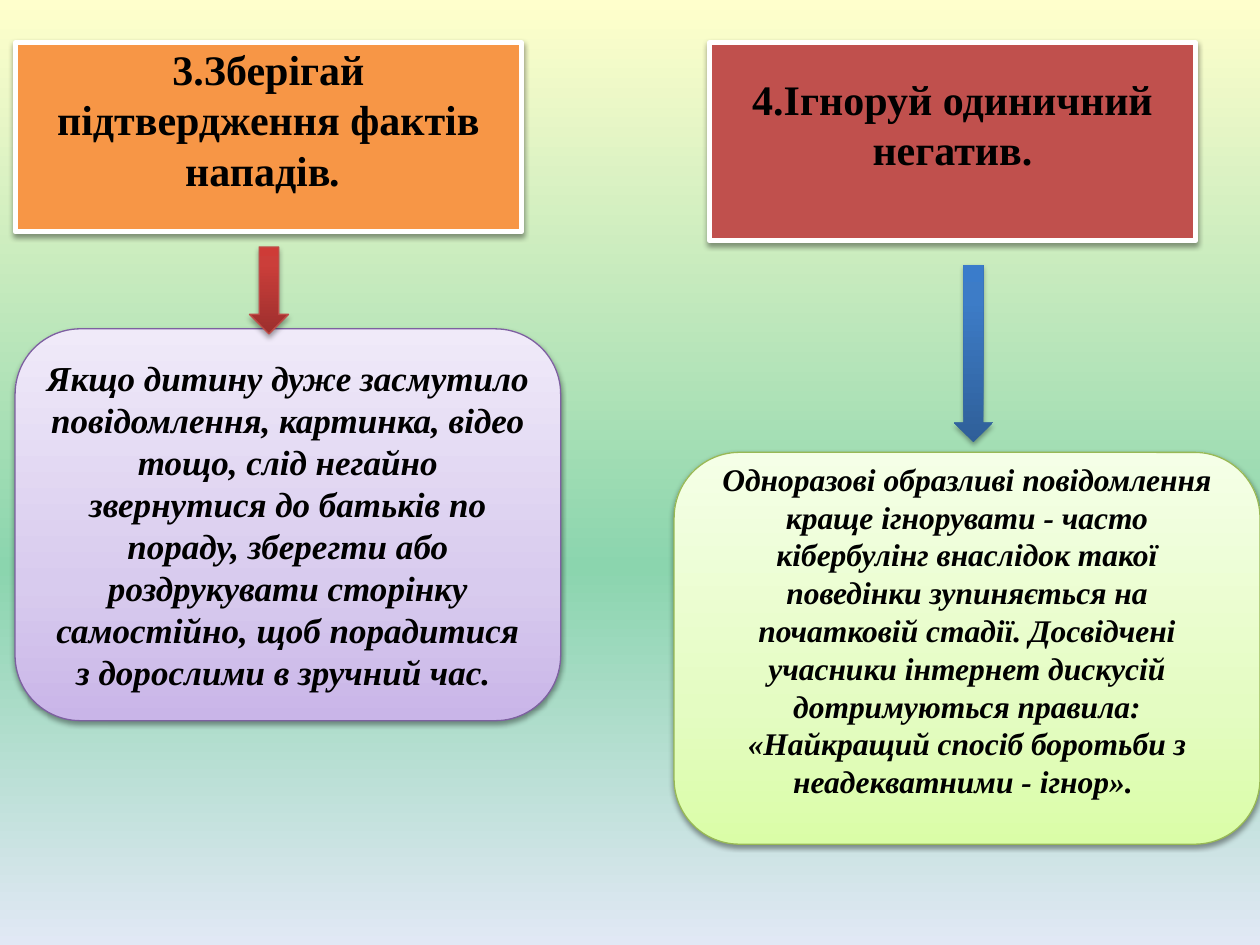
from dataclasses import dataclass
from typing import Optional, Union

from lxml.etree import SubElement
from pptx import Presentation
from pptx.dml.color import RGBColor
from pptx.enum.shapes import MSO_SHAPE as Kind
from pptx.enum.text import MSO_ANCHOR as Anchor, PP_ALIGN as Align
from pptx.oxml.ns import qn
from pptx.util import Inches, Pt

Stops = list[tuple[int, str]]
Box = tuple[float, float, float, float]


@dataclass
class Label:
    runs: list[tuple[str, bool]]  # text, italic
    size: int
    foot: float = 0.05  # bottom inset


@dataclass
class Item:
    kind: Kind
    box: Box
    fill: Union[str, Stops]
    line: Optional[str]
    width: float = 0.75
    shade: tuple[int, float] = (38, 1.6)  # opacity, distance
    label: Optional[Label] = None


def color(code: str) -> RGBColor:
    return RGBColor.from_string(code)


def blend(fill, root, stops: Stops, angle: int) -> None:
    """Fill with a gradient; the angle runs counter-clockwise."""
    fill.gradient()
    fill.gradient_angle = angle
    group = root.find(".//" + qn("a:gsLst"))
    for stop in list(group):
        group.remove(stop)
    for place, code in stops:
        stop = SubElement(group, qn("a:gs"), pos=str(place * 1000))
        SubElement(stop, qn("a:srgbClr"), val=code)


def cast(shape, alpha: int, dist: float) -> None:
    """Drop a soft black shadow straight down."""
    shape.shadow.inherit = False
    group = shape.element.spPr.find(qn("a:effectLst"))
    outer = SubElement(group, qn("a:outerShdw"), blurRad=str(Pt(3.1)),
                       dist=str(Pt(dist)), dir="5400000", rotWithShape="0")
    black = SubElement(outer, qn("a:srgbClr"), val="000000")
    SubElement(black, qn("a:alpha"), val=str(alpha * 1000))


def write(shape, label: Label) -> None:
    frame = shape.text_frame
    frame.word_wrap = True
    frame.vertical_anchor = Anchor.MIDDLE
    frame.margin_bottom = Inches(label.foot)
    para = frame.paragraphs[0]
    para.alignment = Align.CENTER
    font = para.font
    font.name, font.size, font.bold = "Times New Roman", Pt(label.size), True
    font.color.rgb = color("000000")
    for text, slant in label.runs:
        run = para.add_run()
        run.text = text
        run.font.italic = slant


def draw(slide, item: Item) -> None:
    shape = slide.shapes.add_shape(item.kind, *map(Inches, item.box))
    if isinstance(item.fill, str):
        shape.fill.solid()
        shape.fill.fore_color.rgb = color(item.fill)
    else:
        blend(shape.fill, shape.element, item.fill, 90)
    if item.line:
        shape.line.color.rgb = color(item.line)
        shape.line.width = Pt(item.width)
    else:
        shape.line.fill.background()
    cast(shape, *item.shade)
    if item.label:
        write(shape, item.label)


def head(box: Box, fill: str, runs: list[tuple[str, bool]]) -> Item:
    return Item(Kind.RECTANGLE, box, fill, "FFFFFF", 3,
                label=Label(runs, 24, 0.34))


def panel(box: Box, fill: Stops, line: str, label: Label) -> Item:
    return Item(Kind.ROUNDED_RECTANGLE, box, fill, line, label=label)


def arrow(box: Box, fill: Stops, line: Optional[str] = None) -> Item:
    return Item(Kind.DOWN_ARROW, box, fill, line, shade=(35, 1.8))


ITEMS = [
    # Tip 3: advice and heading
    panel((0.12, 2.61, 4.33, 3.11),
          [(0, "C9B5E8"), (35, "D8CBEE"), (100, "F0EAF9")], "7D60A0",
          Label([("Якщо дитину дуже засмутило повідомлення, картинка, відео "
                  "тощо, слід негайно звернутися до батьків по пораду, "
                  "зберегти або роздрукувати сторінку самостійно, щоб "
                  "порадитися з дорослими в зручний час. ", True)], 20)),
    head((0.12, 0.34, 4.02, 1.5), "F79646",
         [("3.Зберігай підтвердження фактів нападів", False), (". ", True)]),
    # Tip 4: heading and advice
    head((5.63, 0.34, 3.86, 1.57), "C0504D",
         [("4.Ігноруй одиничний негатив.", False)]),
    panel((5.35, 3.59, 4.65, 3.11),
          [(0, "DAFDA7"), (35, "E4FCC2"), (100, "F5FFE7")], "98B955",
          Label([("Одноразові образливі повідомлення краще ігнорувати - часто "
                  "кібербулінг внаслідок такої поведінки зупиняється на "
                  "початковій стадії. Досвідчені учасники інтернет дискусій "
                  "дотримуються правила: «Найкращий спосіб боротьби з "
                  "неадекватними - ігнор». ", True)], 18, 0.34)),
    # Arrows from heading to advice
    arrow((1.98, 1.96, 0.31, 0.69),
          [(0, "9C2F2D"), (80, "CB3E3A"), (100, "CE3B37")], "BF4C48"),
    arrow((7.57, 2.1, 0.31, 1.41),
          [(0, "2F5F99"), (80, "3D7CC7"), (100, "3A7CCB")]),
]


def main() -> None:
    deck = Presentation()
    deck.slide_width, deck.slide_height = Inches(10), Inches(7.5)
    slide = deck.slides.add_slide(deck.slide_layouts[6])
    blend(slide.background.fill, slide.element,
          [(0, "FFFFCC"), (60, "8BD5AE"), (100, "E1E8F5")], 270)
    for item in ITEMS:
        draw(slide, item)
    deck.save("out.pptx")


if __name__ == "__main__":
    main()
